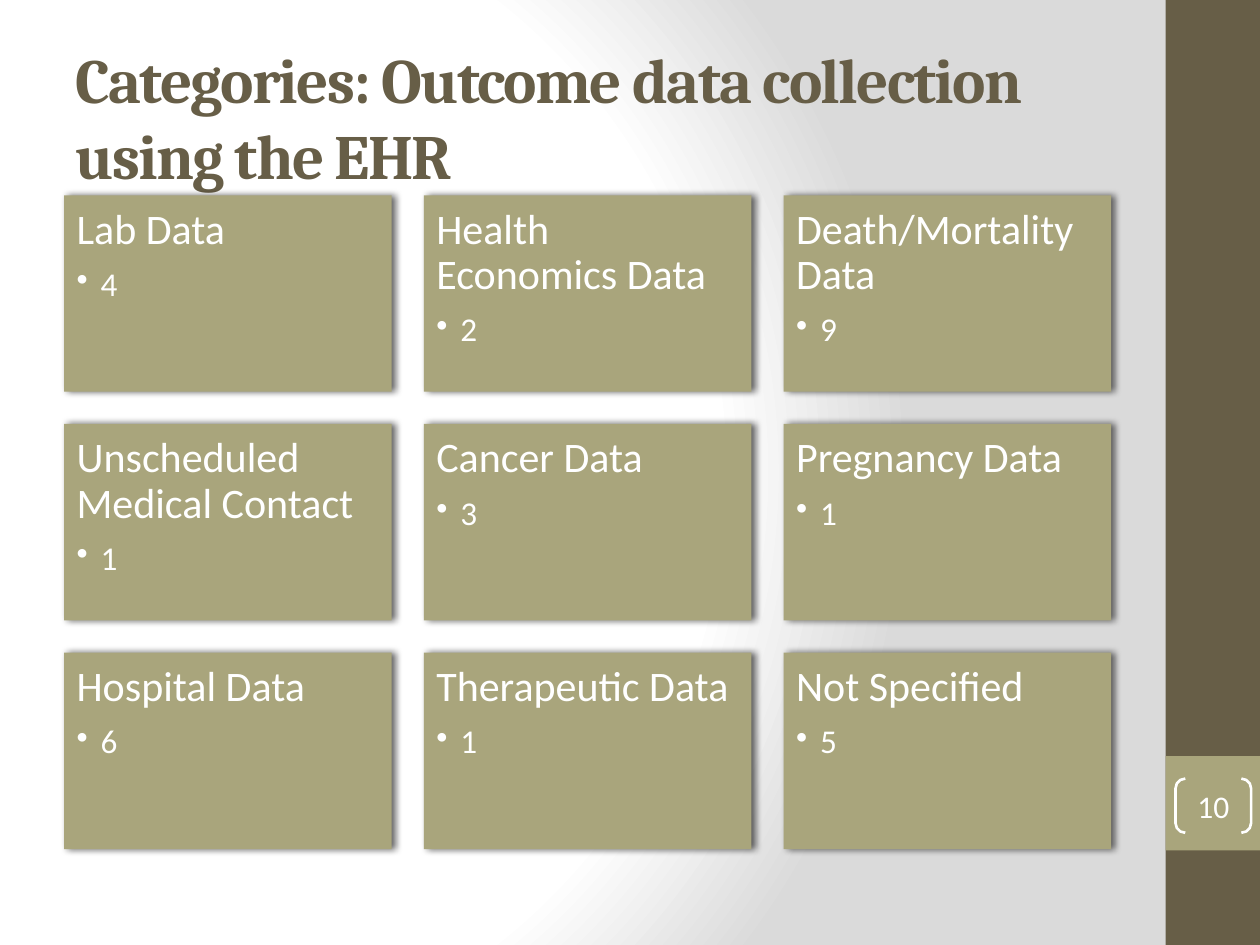
from lxml import etree
from pptx import Presentation
from pptx.dml.color import RGBColor
from pptx.enum.shapes import MSO_SHAPE
from pptx.enum.text import MSO_ANCHOR, PP_ALIGN
from pptx.oxml import parse_xml
from pptx.oxml.ns import nsdecls, qn
from pptx.util import Inches, Pt

RECTANGLE = MSO_SHAPE.RECTANGLE
BRACKETS = MSO_SHAPE.DOUBLE_BRACKET
TOP, MIDDLE = MSO_ANCHOR.TOP, MSO_ANCHOR.MIDDLE
LEFT, CENTER = PP_ALIGN.LEFT, PP_ALIGN.CENTER

BROWN = RGBColor(0x67, 0x5E, 0x47)
OLIVE = RGBColor(0xA9, 0xA5, 0x7C)
WHITE = RGBColor(0xFF, 0xFF, 0xFF)

BACKDROP_STOPS = ((0, "FFFFFF"), (75, "FFFFFF"), (100, "DADADA"))
COLUMNS = 3
CATEGORIES = (
    ("Lab Data", "4"),
    ("Health Economics Data", "2"),
    ("Death/Mortality Data", "9"),
    ("Unscheduled Medical Contact", "1"),
    ("Cancer Data", "3"),
    ("Pregnancy Data", "1"),
    ("Hospital Data", "6"),
    ("Therapeutic Data", "1"),
    ("Not Specified", "5"),
)


def paint_backdrop(slide):
    slide.background.fill.gradient()
    gradient = slide.element.find(".//" + qn("a:gradFill"))
    stops = "".join(
        f'<a:gs pos="{position * 1000}"><a:srgbClr val="{color}"/></a:gs>'
        for position, color in BACKDROP_STOPS
    )
    gradient.getparent().replace(gradient, parse_xml(
        f'<a:gradFill {nsdecls("a")} rotWithShape="1"><a:gsLst>{stops}</a:gsLst>'
        '<a:path path="circle"><a:fillToRect l="20000" t="50000" r="100000" b="50000"/>'
        '</a:path></a:gradFill>'
    ))


def add_panel(slide, left, top, width, height, fill):
    panel = slide.shapes.add_shape(RECTANGLE, left, top, width, height)
    panel.shadow.inherit = False
    panel.fill.solid()
    panel.fill.fore_color.rgb = fill
    panel.line.fill.background()
    return panel


def add_run(paragraph, text, size, color=WHITE, face="Calibri"):
    run = paragraph.add_run()
    run.text = text
    run.font.size = Pt(size)
    run.font.name = face
    run.font.color.rgb = color
    return run


def place_title(slide, left, top, width, height):
    title = slide.shapes.title
    title.left, title.top, title.width, title.height = left, top, width, height
    frame = title.text_frame
    frame.word_wrap = True
    frame.vertical_anchor = MIDDLE
    heading = frame.paragraphs[0]
    heading.alignment = LEFT
    run = add_run(heading, "Categories: Outcome data collection using the EHR",
                  36, BROWN, "Cambria")
    run.font.bold = True
    run.font._element.set("spc", "-100")


def add_soft_shadow(card):
    effects = card.element.spPr.find(qn("a:effectLst"))
    effects.append(parse_xml(
        f'<a:outerShdw {nsdecls("a")} blurRad="{Pt(4)}" dist="{Pt(2)}" dir="0" '
        'rotWithShape="0"><a:srgbClr val="000000"><a:alpha val="60000"/></a:srgbClr>'
        '</a:outerShdw>'
    ))


def add_card(slide, left, top, width, height, category, count):
    card = add_panel(slide, left, top, width, height, OLIVE)
    add_soft_shadow(card)
    frame = card.text_frame
    frame.word_wrap = True
    frame.vertical_anchor = TOP
    frame.margin_left = frame.margin_right = Inches(0.1)
    frame.margin_top = frame.margin_bottom = Inches(0.1)

    name_line, count_line = frame.paragraphs[0], frame.add_paragraph()
    for line, text, size, space_after in (
        (name_line, category, 24, 8.4),
        (count_line, count, 19, 2.85),
    ):
        line.alignment = LEFT
        line.line_spacing = 0.9
        line.space_after = Pt(space_after)
        add_run(line, text, size)

    count_line.level = 1
    properties = count_line._p.get_or_add_pPr()
    properties.set("marL", str(Inches(0.19)))
    properties.set("indent", str(Inches(-0.19)))
    etree.SubElement(properties, qn("a:buChar")).set("char", "•")


def add_category_grid(slide, left, top, width, height):
    card_width, card_height = Inches(2.6), Inches(1.56)
    rows = len(CATEGORIES) // COLUMNS
    step_x = (width - card_width) // (COLUMNS - 1)
    step_y = (height - card_height) // (rows - 1)
    for index, (category, count) in enumerate(CATEGORIES):
        row, column = divmod(index, COLUMNS)
        add_card(slide, left + column * step_x, top + row * step_y,
                 card_width, card_height, category, count)


def add_sidebar(slide, left, top, width, height):
    add_panel(slide, left, top, width, height, BROWN)
    number_top = top + Inches(6)
    add_panel(slide, left, number_top, width, width, OLIVE)

    page_number = slide.shapes.add_shape(
        BRACKETS, left + Inches(0.08), number_top + Inches(0.18),
        Inches(0.6), Inches(0.43))
    page_number.adjustments[0] = 0.18
    page_number.shadow.inherit = False
    page_number.fill.background()
    page_number.line.color.rgb = WHITE
    page_number.line.width = Pt(1.5)
    frame = page_number.text_frame
    frame.vertical_anchor = MIDDLE
    frame.margin_left = frame.margin_right = 0
    frame.margin_top = frame.margin_bottom = 0
    frame.paragraphs[0].alignment = CENTER
    add_run(frame.paragraphs[0], "10", 18)


def main():
    presentation = Presentation()
    presentation.slide_width = Inches(10)
    presentation.slide_height = Inches(7.5)
    slide = presentation.slides.add_slide(presentation.slide_layouts[5])
    paint_backdrop(slide)
    add_sidebar(slide, Inches(9.25), 0, Inches(0.75), Inches(7.5))
    place_title(slide, Inches(0.5), Inches(0.3), Inches(8.33), Inches(1.25))
    add_category_grid(slide, Inches(0.51), Inches(1.55), Inches(8.31), Inches(5.19))
    presentation.save("out.pptx")


if __name__ == "__main__":
    main()
